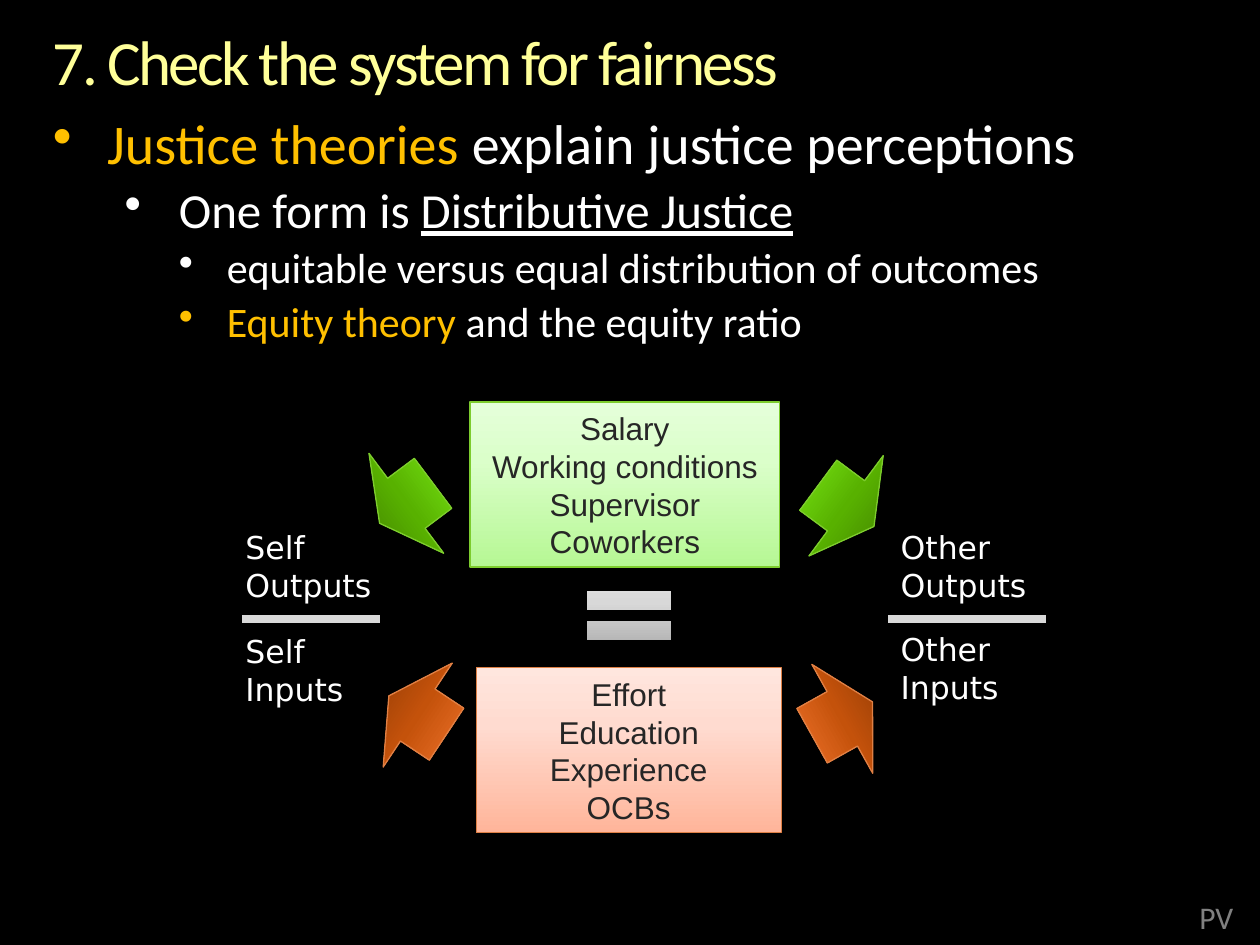
from dataclasses import dataclass

import pptx
import pptx.dml.color
import pptx.enum.shapes
import pptx.enum.text
import pptx.oxml
import pptx.oxml.ns
import pptx.util

SHAPE = pptx.enum.shapes.MSO_SHAPE
ALIGN = pptx.enum.text.PP_ALIGN
ANCHOR = pptx.enum.text.MSO_ANCHOR
NO_MARGINS = dict.fromkeys(
    ("margin_left", "margin_top", "margin_right", "margin_bottom"), 0)


@dataclass(frozen=True)
class Theme:
    heading_font: str = "Calibri"
    card_font: str = "Arial"
    label_font: str = "DejaVu Sans"
    title_size: int = 36
    level_sizes: tuple = (32, 28, 24)
    small_size: int = 18
    background: str = "000000"
    title: str = "FFFF99"
    text: str = "FFFFFF"
    accent: str = "FFC000"
    card_text: str = "262626"
    mark: str = "808080"
    bar: str = "D9D9D9"
    green_line: str = "7DCC2E"
    orange_line: str = "DF8045"
    green_card: tuple = ((0, "B6F794"), (65, "DBFFCA"), (100, "E5FFDA"))
    orange_card: tuple = ((0, "FFB59A"), (65, "FFDBD0"), (100, "FFE6DE"))
    grey: tuple = ((0, "A7A7A7"), (65, "D8D8D8"), (100, "E4E4E4"))
    green_arrow: tuple = ((0, "376E00"), (50, "58B100"), (70, "68CC0B"), (100, "83F229"))
    orange_arrow: tuple = ((0, "7D3203"), (50, "C4520B"), (70, "DB631C"), (100, "FF803C"))


THEME = Theme()


@dataclass(frozen=True)
class Box:
    """An area in inches, divided into square cells of a tenth of an inch."""
    left: float
    top: float
    width: float
    height: float

    def cells(self, column, row, columns, rows):
        return Box(self.left + column / 10, self.top + row / 10, columns / 10, rows / 10)

    def lengths(self):
        return [pptx.util.Inches(n) for n in (self.left, self.top, self.width, self.height)]


def apply(target, values):
    for name, value in values.items():
        setattr(target, name, value)


def rgb(value):
    return pptx.dml.color.RGBColor.from_string(value)


def add_span(para, text, font, size, color, underline=None):
    span = para.add_run()
    span.text = text
    apply(span.font, {"name": font, "size": pptx.util.Pt(size), "underline": underline})
    span.font.color.rgb = rgb(color)
    return span


def write_lines(frame, lines, font, color, align=ALIGN.LEFT):
    frame.word_wrap = True
    for index, line in enumerate(lines):
        para = frame.add_paragraph() if index else frame.paragraphs[0]
        para.alignment = align
        add_span(para, line, font, THEME.small_size, color)


def add_label(page, box, lines, font, color):
    label = page.shapes.add_textbox(*box.lengths())
    write_lines(label.text_frame, lines, font, color)


def add_gradient_shape(page, box, kind, stops, line_color, rotation=0):
    """Stops run from the bottom of the shape to its top."""
    shape = page.shapes.add_shape(kind, *box.lengths())
    shape.shadow.inherit = False
    shape.rotation = rotation
    marks = "".join(f'<a:gs pos="{place * 1000}"><a:srgbClr val="{color}"/></a:gs>'
                    for place, color in stops)
    gradient = pptx.oxml.parse_xml(
        f'<a:gradFill {pptx.oxml.ns.nsdecls("a")} rotWithShape="1"><a:gsLst>{marks}</a:gsLst>'
        '<a:lin ang="16200000" scaled="0"/></a:gradFill>')
    shape._element.spPr.find(pptx.oxml.ns.qn("a:prstGeom")).addnext(gradient)
    shape.line.color.rgb = rgb(line_color)
    shape.line.width = pptx.util.Pt(0.75)
    return shape


def add_card(page, box, lines, stops, line_color):
    card = add_gradient_shape(page, box, SHAPE.RECTANGLE, stops, line_color)
    card.text_frame.vertical_anchor = ANCHOR.MIDDLE
    write_lines(card.text_frame, lines, THEME.card_font, THEME.card_text, ALIGN.CENTER)


def add_bar(page, box):
    left, top, width, _ = box.lengths()
    bar = page.shapes.add_connector(
        pptx.enum.shapes.MSO_CONNECTOR.STRAIGHT, left, top, left + width, top)
    bar.line.color.rgb = rgb(THEME.bar)
    bar.line.width = pptx.util.Pt(4.5)
    bar._element.spPr.append(
        pptx.oxml.parse_xml(f'<a:effectLst {pptx.oxml.ns.nsdecls("a")}/>'))


def add_ratio(page, box, outputs, inputs, bar_start, bar_length):
    half = 7.1
    for row, lines in ((0, outputs), (box.height * 10 - half, inputs)):
        add_label(page, box.cells(0, row, box.width * 10, half), lines,
                  THEME.label_font, THEME.text)
    add_bar(page, box.cells(bar_start, 7.7, bar_length, 0))


def add_title(page, box, text):
    title = page.shapes.title
    apply(title, dict(zip(("left", "top", "width", "height"), box.lengths())))
    apply(title.text_frame, {**NO_MARGINS, "vertical_anchor": ANCHOR.TOP, "word_wrap": True})
    para = title.text_frame.paragraphs[0]
    apply(para, {"alignment": ALIGN.LEFT, "line_spacing": 0.9})
    span = add_span(para, text, THEME.heading_font, THEME.title_size, THEME.title)
    span._r.get_or_add_rPr().set("spc", "-150")


def add_bullets(page, box, points):
    """Each point is its level and its spans: text, colour, underline."""
    frame = page.shapes.add_textbox(*box.lengths()).text_frame
    apply(frame, {**NO_MARGINS, "word_wrap": True})
    indents = ((0.43, 0.43), (1, 0.43), (1.38, 0.38))
    for index, (level, spans) in enumerate(points):
        para = frame.add_paragraph() if index else frame.paragraphs[0]
        size = THEME.level_sizes[level]
        margin, hang = (pptx.util.Inches(n) for n in indents[level])
        apply(para, {"level": level, "line_spacing": 0.9})
        if index:
            para.space_before = pptx.util.Pt(size * 0.2)
        properties = para._p.get_or_add_pPr()
        properties.set("marL", str(margin))
        properties.set("indent", str(-hang))
        properties.append(pptx.oxml.parse_xml(
            f'<a:buChar {pptx.oxml.ns.nsdecls("a")} char="•"/>'))
        for text, color, underline in spans:
            add_span(para, text, THEME.heading_font, size, color, underline)


def add_equity_diagram(page, box):
    add_card(page, box.cells(19.3, 0.9, 24.6, 13.1),
             ("Salary", "Working conditions", "Supervisor", "Coworkers"),
             THEME.green_card, THEME.green_line)
    add_card(page, box.cells(19.8, 22, 24.2, 13.1),
             ("Effort", "Education", "Experience", "OCBs"),
             THEME.orange_card, THEME.orange_line)
    add_gradient_shape(page, box.cells(27.3, 14.5, 9.2, 6.7), SHAPE.MATH_EQUAL,
                       THEME.grey, THEME.background)
    add_ratio(page, box.cells(0.5, 10.4, 16.7, 15.4),
              ["Self Outputs"], ["Self", "Inputs"], 0.7, 11)
    add_ratio(page, box.cells(52.5, 10.4, 16.7, 15.2),
              ["Other Outputs"], ["Other Inputs"], 0, 12.5)
    green = THEME.green_arrow, THEME.green_line
    orange = THEME.orange_arrow, THEME.orange_line
    for column, row, rows, angle, colors in (
            (9.3, 6.3, 5.3, 53.2, green), (44.2, 6.4, 5.5, 306.5, green),
            (43.9, 23.3, 5.5, 240.8, orange), (10.2, 23, 5.5, 123.6, orange)):
        add_gradient_shape(page, box.cells(column, row, 9.9, rows), SHAPE.DOWN_ARROW,
                           *colors, rotation=angle)


def main():
    deck = pptx.Presentation()
    slide_box = Box(0, 0, 10, 7.5)
    deck.slide_width, deck.slide_height = slide_box.lengths()[2:]
    page = deck.slides.add_slide(deck.slide_layouts[5])
    page.background.fill.solid()
    page.background.fill.fore_color.rgb = rgb(THEME.background)
    add_label(page, slide_box.cells(94.2, 70.8, 5.8, 4), ["PV"], THEME.heading_font, THEME.mark)
    add_title(page, slide_box.cells(4.2, 2.5, 91.7, 5.5), "7. Check the system for fairness")
    add_bullets(page, slide_box.cells(4.2, 9.2, 91.7, 18.9), (
        (0, (("Justice theories ", THEME.accent, None),
             ("explain justice perceptions", THEME.text, None))),
        (1, (("One form is ", THEME.text, None), ("Distributive Justice", THEME.text, True))),
        (2, (("equitable versus equal distribution of outcomes", THEME.text, None),)),
        (2, (("Equity theory ", THEME.accent, None),
             ("and the equity ratio", THEME.text, None)))))
    add_equity_diagram(page, slide_box.cells(18, 31, 70, 36))
    deck.save("out.pptx")


if __name__ == "__main__":
    main()
